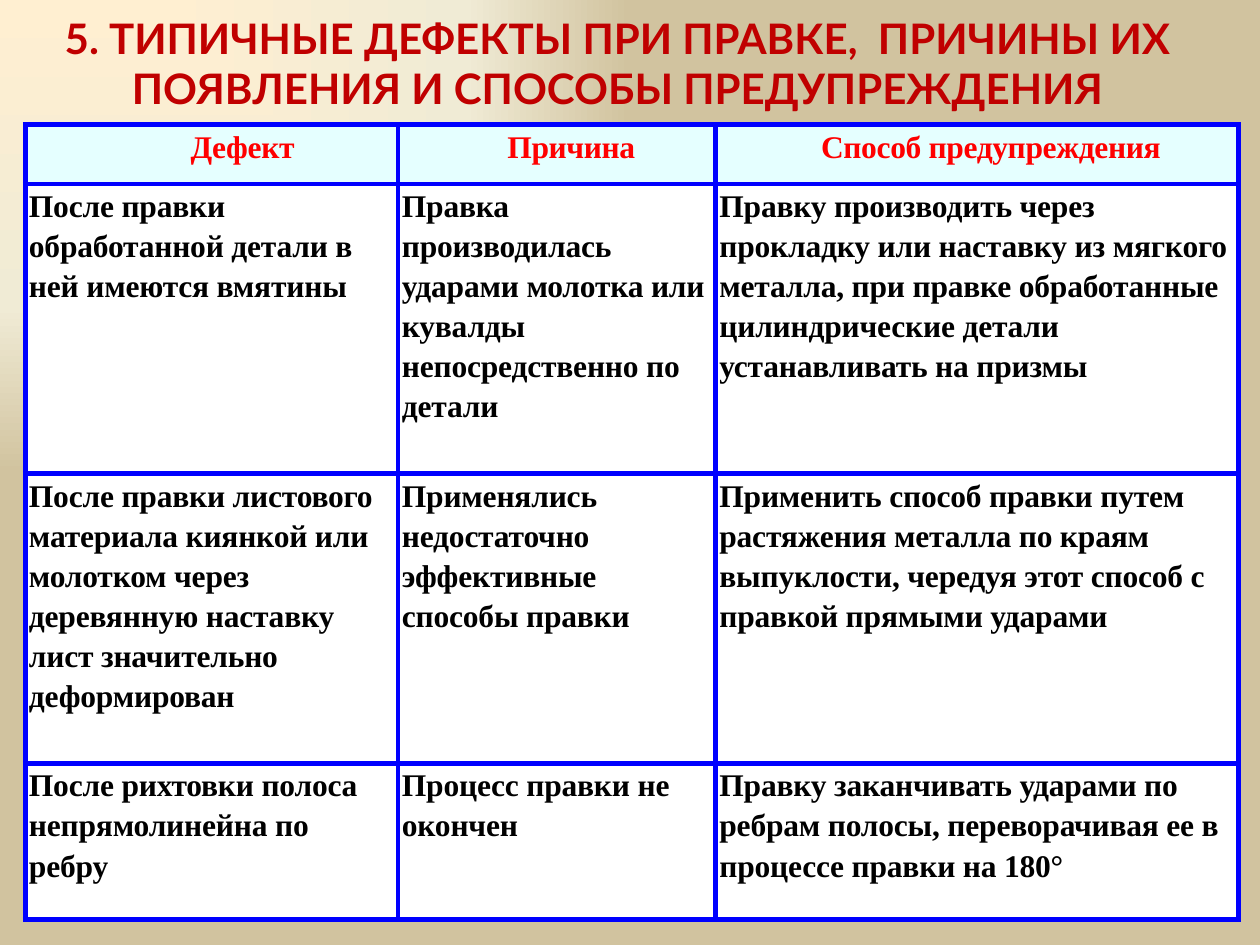
from dataclasses import dataclass

from lxml import etree
from pptx import Presentation
from pptx import util as u
from pptx.dml.color import RGBColor
from pptx.enum import text
from pptx.oxml import parse_xml
from pptx.oxml.ns import qn

NS = ('xmlns:a="http://schemas.openxmlformats.org/drawingml/2006/main" '
      'xmlns:p="http://schemas.openxmlformats.org/presentationml/2006/main"')


@dataclass(frozen=True)
class Theme:
    """Colours, fonts and sizes of the slide."""
    title: str = "C00000"
    heading: str = "FF0000"
    body: str = "000000"
    border: str = "0000FF"
    heading_fill: str = "E5FFFF"
    body_fill: str = "FFFFFF"
    title_font: str = "Lato"
    table_font: str = "Times New Roman"
    title_size: int = 24
    table_size: int = 18
    border_width: int = 3
    backdrop: tuple = ((0, "FFEFD1"), (65, "F0EBD5"), (100, "D1C39F"))


THEME = Theme()
TITLE = "5. ТИПИЧНЫЕ ДЕФЕКТЫ ПРИ ПРАВКЕ,  ПРИЧИНЫ ИХ ПОЯВЛЕНИЯ И СПОСОБЫ ПРЕДУПРЕЖДЕНИЯ"
DEFECTS = [
    ("Дефект", "Причина", "Способ предупреждения"),
    ("После правки обработанной детали в ней имеются вмятины",
     "Правка производилась ударами молотка или кувалды непосредственно по детали",
     "Правку производить через прокладку или наставку из мягкого металла, при правке "
     "обработанные цилиндрические детали устанавливать на призмы"),
    ("После правки листового материала киянкой или молотком через деревянную наставку "
     "лист значительно деформирован",
     "Применялись недостаточно эффективные способы правки",
     "Применить способ правки путем растяжения металла по краям выпуклости, чередуя "
     "этот способ с правкой прямыми ударами"),
    ("После рихтовки полоса непрямолинейна по ребру",
     "Процесс правки не окончен",
     "Правку заканчивать ударами по ребрам полосы, переворачивая ее в процессе правки на 180°"),
]
COLUMNS = (2.96, 2.52, 4.15)
ROWS = (0.47, 2.3, 2.3, 1.24)
HEADING_INDENTS = (0.49, 0.23, 0.22)


def set_all(obj, values):
    """Set every attribute of obj named in values."""
    for name, value in values.items():
        setattr(obj, name, value)


def write(p, content, font, size, colour):
    """Add one bold run to a paragraph and return it."""
    r = p.add_run()
    r.text = content
    set_all(r.font, {"name": font, "size": u.Pt(size), "bold": True})
    r.font.color.rgb = RGBColor.from_string(colour)
    return r


def paint_background(s):
    """Fill the slide with a gradient spreading from the top left corner."""
    stops = "".join(f'<a:gs pos="{pos * 1000}"><a:srgbClr val="{colour}"/></a:gs>'
                    for pos, colour in THEME.backdrop)
    s.element.cSld.insert(0, parse_xml(
        f'<p:bg {NS}><p:bgPr><a:gradFill rotWithShape="1"><a:gsLst>{stops}</a:gsLst>'
        '<a:path path="rect"><a:fillToRect r="100000" b="100000"/></a:path></a:gradFill>'
        '<a:effectLst/></p:bgPr></p:bg>'))


def add_title(s, box):
    """Place the centred slide title in the box."""
    tf = s.shapes.add_textbox(*map(u.Inches, box)).text_frame
    set_all(tf, {"word_wrap": True, "vertical_anchor": text.MSO_ANCHOR.MIDDLE})
    p = tf.paragraphs[0]
    p.alignment = text.PP_ALIGN.CENTER
    write(p, TITLE, THEME.title_font, THEME.title_size, THEME.title)


def add_borders(cell):
    """Draw the same line on the four sides of a cell."""
    tcPr = cell._tc.get_or_add_tcPr()
    for i, side in enumerate(("lnL", "lnR", "lnT", "lnB")):
        ln = etree.Element(qn(f"a:{side}"), w=str(u.Pt(THEME.border_width)))
        fill = etree.SubElement(ln, qn("a:solidFill"))
        etree.SubElement(fill, qn("a:srgbClr"), val=THEME.border)
        tcPr.insert(i, ln)


def fill_cell(cell, content, indent=None):
    """Write and format one cell; a given indent makes it a heading."""
    heading = indent is not None
    set_all(cell, {"margin_left": u.Inches(0.03), "margin_right": u.Inches(0.03),
                   "margin_top": 0, "margin_bottom": 0})
    cell.fill.solid()
    cell.fill.fore_color.rgb = RGBColor.from_string(
        THEME.heading_fill if heading else THEME.body_fill)
    p = cell.text_frame.paragraphs[0]
    p.line_spacing = 1.15
    r = write(p, content, THEME.table_font, THEME.table_size,
              THEME.heading if heading else THEME.body)
    r.font._element.set("spc", "-20" if heading else "-10")
    if heading:
        p.alignment = text.PP_ALIGN.CENTER
        p._p.get_or_add_pPr().set("marL", str(u.Inches(indent)))
    add_borders(cell)


def add_defects(s, box):
    """Place the table of defects, causes and remedies in the box."""
    table = s.shapes.add_table(len(ROWS), len(COLUMNS), *map(u.Inches, box)).table
    set_all(table, {"first_row": False, "horz_banding": False})
    for column, width in zip(table.columns, COLUMNS):
        column.width = u.Inches(width)
    for row, height in zip(table.rows, ROWS):
        row.height = u.Inches(height)
    for i, contents in enumerate(DEFECTS):
        for j, content in enumerate(contents):
            fill_cell(table.cell(i, j), content, None if i else HEADING_INDENTS[j])


def main():
    """Build the slide and save it."""
    prs = Presentation()
    set_all(prs, {"slide_width": u.Inches(10), "slide_height": u.Inches(7.5)})
    s = prs.slides.add_slide(prs.slide_layouts[6])
    paint_background(s)
    add_title(s, (0.08, 0, 9.64, 0.99))
    add_defects(s, (0.2, 0.99, sum(COLUMNS), sum(ROWS)))
    prs.save("out.pptx")


if __name__ == "__main__":
    main()
